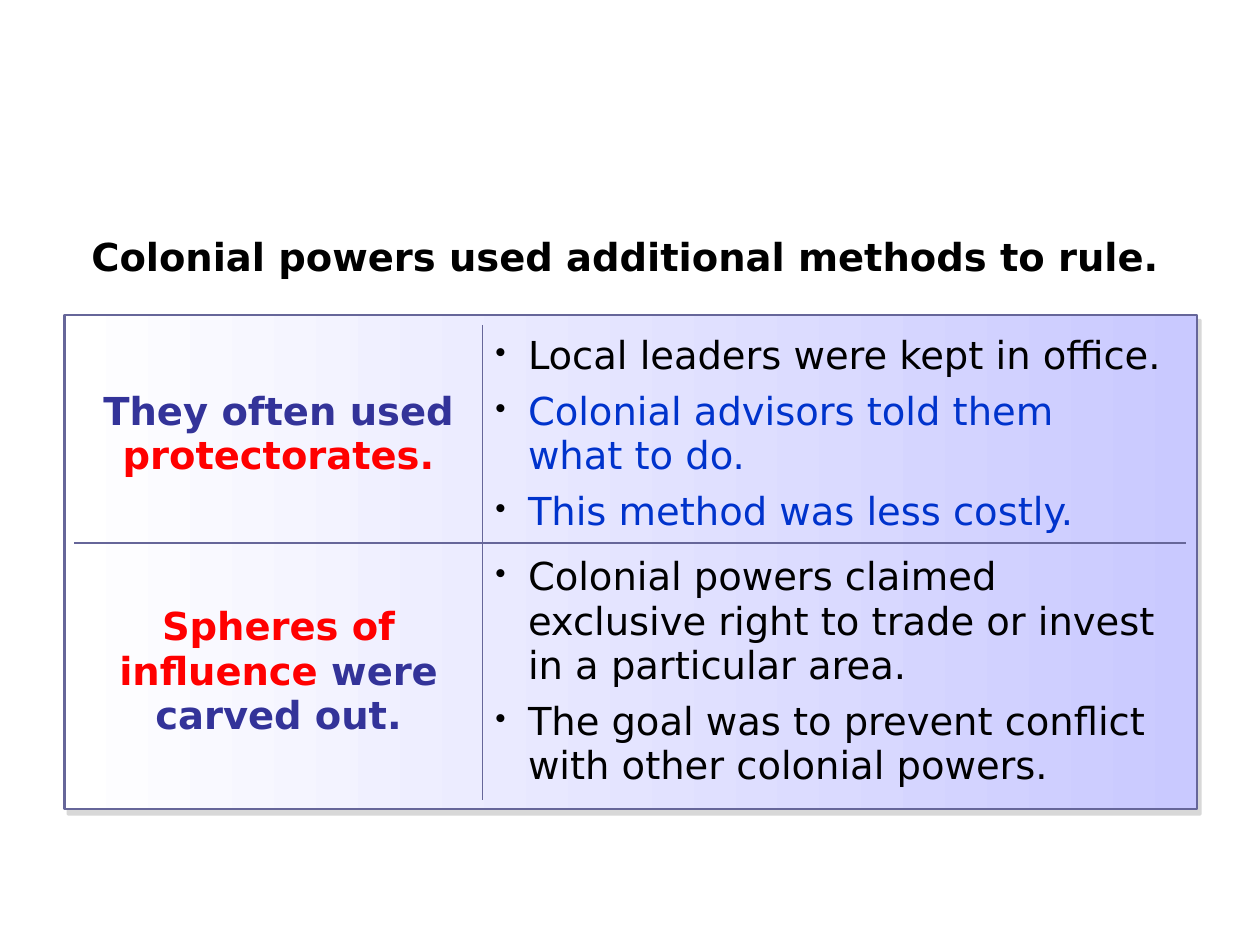
from lxml import etree
from pptx import Presentation
from pptx.dml.color import RGBColor
from pptx.enum import shapes, text
from pptx.oxml import parse_xml
from pptx.oxml.ns import nsdecls, qn
from pptx.util import Cm, Pt

COLORS = {
    "black": "000000", "white": "FFFFFF", "lavender": "C9C9FF",
    "border": "666699", "shadow": "B2B2B2",
    "navy": "333399", "red": "FF0000", "blue": "0033CC",
}
FONT = {"name": "DejaVu Sans", "size": Pt(22)}
HEADING = {"alignment": text.PP_ALIGN.CENTER, "space_before": Pt(4.4)}
BULLET = {"alignment": text.PP_ALIGN.LEFT, "space_after": Pt(6)}

# Each row: heading runs, then bullet items, as (words, colour)
ROWS = [
    ([("They often used ", "navy"), ("protectorates.", "red")],
     [("Local leaders were kept in office.", "black"),
      ("Colonial advisors told them \nwhat to do.", "blue"),
      ("This method was less costly.", "blue")]),
    ([("Spheres of influence", "red"), (" were carved out.", "navy")],
     [("Colonial powers claimed exclusive right to trade or invest "
       "in a particular area.", "black"),
      ("The goal was to prevent conflict with other colonial powers.", "black")]),
]


def rgb(color):
    return RGBColor.from_string(COLORS[color])


def apply(target, values):
    for name, value in values.items():
        setattr(target, name, value)


class SlideBuilder:
    def __init__(self, slide):
        self.slide = slide

    def add_text(self, paragraph, runs, layout, bold):
        apply(paragraph, layout)
        for words, color in runs:
            for index, line in enumerate(words.split("\n")):
                if index:
                    paragraph.add_line_break()
                run = paragraph.add_run()
                run.text = line
                apply(run.font, {**FONT, "bold": bold})
                run.font.color.rgb = rgb(color)

    def title(self, words, left, top, width, height):
        shape = self.slide.shapes.title
        apply(shape, {"left": Cm(left), "top": Cm(top),
                      "width": Cm(width), "height": Cm(height)})
        apply(shape.text_frame, {"word_wrap": True,
                                 "auto_size": text.MSO_AUTO_SIZE.NONE,
                                 "vertical_anchor": text.MSO_ANCHOR.TOP})
        self.add_text(shape.text_frame.paragraphs[0], [(words, "black")], HEADING, True)

    def panel(self, left, top, width, height):
        shape = self.slide.shapes.add_shape(
            shapes.MSO_SHAPE.RECTANGLE, Cm(left), Cm(top), Cm(width), Cm(height))
        shape.fill.gradient()
        shape.fill.gradient_angle = 0
        for stop, color in zip(shape.fill.gradient_stops, ("white", "lavender")):
            stop.color.rgb = rgb(color)
        shape.line.color.rgb = rgb("border")
        shape.line.width = Pt(1.5)
        # Hard offset shadow
        shape.shadow.inherit = False
        effects = shape._element.spPr.find(qn("a:effectLst"))
        effects.append(parse_xml(
            f'<a:outerShdw {nsdecls("a")} blurRad="0" dist="{Pt(3.6)}" dir="{56 * 60000}">'
            f'<a:srgbClr val="{COLORS["shadow"]}"><a:alpha val="50000"/></a:srgbClr>'
            '</a:outerShdw>'))

    def borders(self, cell, drawn):
        properties = cell._tc.get_or_add_tcPr()
        for side in "LRTB":
            line = etree.SubElement(properties, qn(f"a:ln{side}"), w=str(Pt(1)))
            if side in drawn:
                fill = etree.SubElement(line, qn("a:solidFill"))
                etree.SubElement(fill, qn("a:srgbClr"), val=COLORS["border"])
            else:
                etree.SubElement(line, qn("a:noFill"))

    def bullet(self, paragraph):
        properties = paragraph._p.get_or_add_pPr()
        properties.set("marL", str(Cm(0.66)))
        properties.set("indent", str(-Cm(0.66)))
        color = etree.SubElement(properties, qn("a:buClr"))
        etree.SubElement(color, qn("a:srgbClr"), val=COLORS["black"])
        etree.SubElement(properties, qn("a:buSzPct"), val="80000")
        etree.SubElement(properties, qn("a:buChar"), char="•")

    def table(self, rows, left, top, widths, heights):
        table = self.slide.shapes.add_table(
            len(rows), len(widths), Cm(left), Cm(top),
            Cm(sum(widths)), Cm(sum(heights))).table
        apply(table, {"first_row": False, "horz_banding": False})
        for column, width in zip(table.columns, widths):
            column.width = Cm(width)
        for row, height in zip(table.rows, heights):
            row.height = Cm(height)
        for index, (heading, items) in enumerate(rows):
            cells = table.rows[index].cells
            # Only the inner grid lines are drawn
            for cell, inner_side in zip(cells, "RL"):
                self.borders(cell, inner_side + "BT"[index])
                cell.fill.background()
                cell.vertical_anchor = text.MSO_ANCHOR.MIDDLE
            self.add_text(cells[0].text_frame.paragraphs[0], heading, HEADING, True)
            frame = cells[1].text_frame
            for number, item in enumerate(items):
                paragraph = frame.add_paragraph() if number else frame.paragraphs[0]
                self.add_text(paragraph, [item], BULLET, False)
                self.bullet(paragraph)


def main():
    presentation = Presentation()
    presentation.slide_width, presentation.slide_height = Cm(25.4), Cm(19.05)
    title_only = presentation.slide_layouts[5]
    builder = SlideBuilder(presentation.slides.add_slide(title_only))

    # Heading
    builder.title("Colonial powers used additional methods to rule.",
                  1.07, 4.57, 23.06, 1.19)
    # Shaded panel with the table on it
    builder.panel(1.3, 6.35, 22.83, 9.96)
    builder.table(ROWS, 1.5, 6.55, widths=(8.23, 14.17), heights=(4.4, 5.18))

    presentation.save("out.pptx")


if __name__ == "__main__":
    main()
